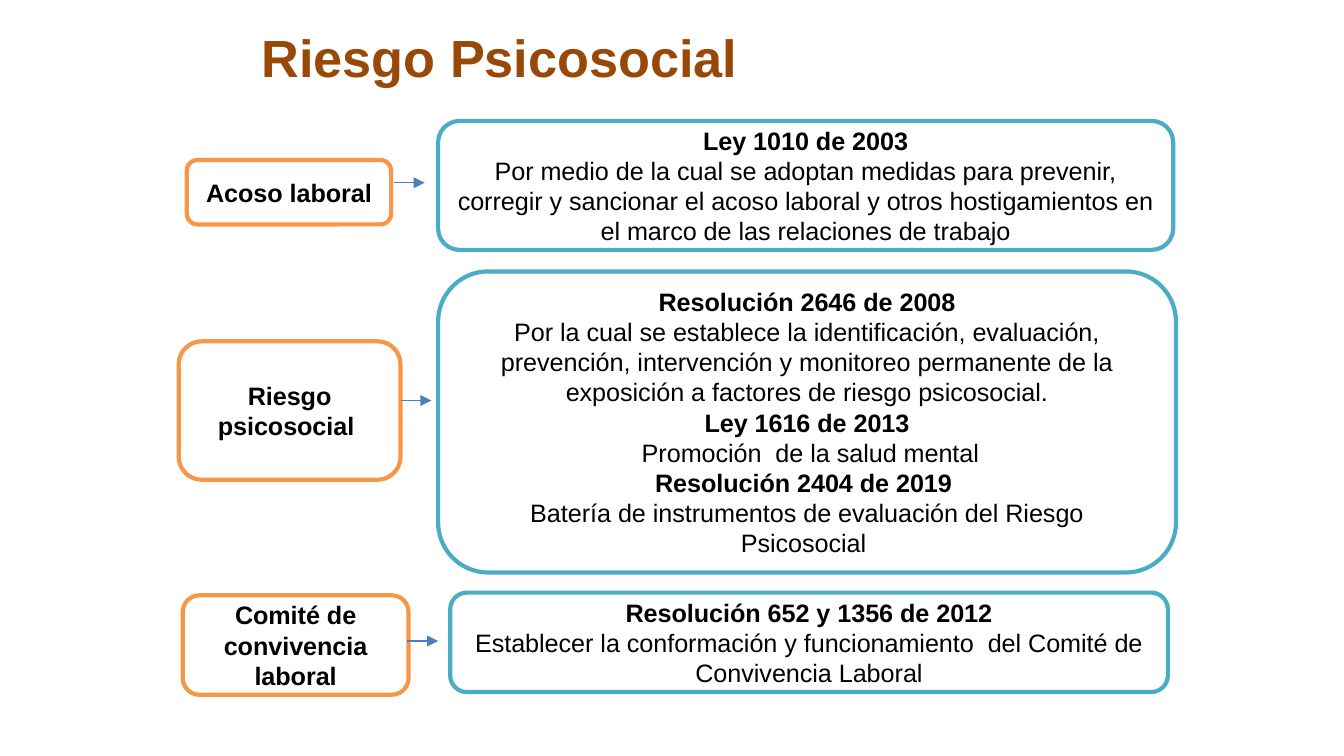
from lxml.etree import SubElement
from pptx import Presentation
from pptx.dml.color import RGBColor
from pptx.enum.shapes import MSO_CONNECTOR, MSO_SHAPE
from pptx.enum.text import MSO_ANCHOR, PP_ALIGN
from pptx.oxml.ns import qn
from pptx.util import Inches, Pt

COLORS = {
    "title": "984807",
    "text": "000000",
    "fill": "FFFFFF",
    "topic": "F79646",
    "law": "4BACC6",
    "arrow": "4B7EBC",
}
SIDE_MARGINS = {"topic": 0.1, "law": 0.09}
ARROW_LENGTH = 0.23

# Each row: topic box and text, arrow start, law box and (heading, description) pairs
ROWS = [
    ((1.39, 1.19, 1.52, 0.48), "Acoso laboral ", (2.93, 1.36),
     (3.26, 0.9, 5.47, 0.96), [
        ("Ley 1010 de 2003",
         "Por medio de la cual se adoptan medidas para prevenir, corregir y sancionar "
         "el acoso laboral y otros hostigamientos en el marco de las relaciones de trabajo"),
    ]),
    ((1.33, 2.54, 1.65, 1.03), "Riesgo psicosocial ", (2.98, 2.98),
     (3.26, 2.02, 5.49, 2.24), [
        ("Resolución 2646 de 2008",
         "Por la cual se establece la identificación, evaluación, prevención, intervención "
         "y monitoreo permanente de la exposición a factores de riesgo psicosocial."),
        ("Ley 1616 de 2013", " Promoción  de la salud mental"),
        ("Resolución 2404 de 2019 ",
         "Batería de instrumentos de evaluación del Riesgo Psicosocial "),
    ]),
    ((1.36, 4.43, 1.68, 0.74), "Comité de convivencia laboral", (3.03, 4.77),
     (3.35, 4.41, 5.34, 0.74), [
        ("Resolución 652 y 1356 de 2012",
         "Establecer la conformación y funcionamiento  del Comité de Convivencia Laboral"),
    ]),
]


def color(name):
    return RGBColor.from_string(COLORS[name])


def write_paragraphs(text_frame, lines, size, color_name):
    """Write one centred paragraph for each (text, bold) pair."""
    text_frame.word_wrap = True
    for index, (text, bold) in enumerate(lines):
        paragraph = text_frame.add_paragraph() if index else text_frame.paragraphs[0]
        paragraph.alignment = PP_ALIGN.CENTER
        run = paragraph.add_run()
        run.text = text
        run.font.name = "Arial"
        run.font.size = Pt(size)
        run.font.bold = bold
        run.font.color.rgb = color(color_name)


def add_title(slide, box, text):
    title = slide.shapes.add_textbox(*map(Inches, box))
    write_paragraphs(title.text_frame, [(text, True)], 28, "title")


def add_rounded_box(slide, box, lines, role):
    """Add a topic or law box, styled by its role."""
    shape = slide.shapes.add_shape(MSO_SHAPE.ROUNDED_RECTANGLE, *map(Inches, box))
    shape.shadow.inherit = False
    shape.fill.solid()
    shape.fill.fore_color.rgb = color("fill")
    shape.line.color.rgb = color(role)
    shape.line.width = Pt(2.25)
    text_frame = shape.text_frame
    text_frame.vertical_anchor = MSO_ANCHOR.MIDDLE
    text_frame.margin_left = text_frame.margin_right = Inches(SIDE_MARGINS[role])
    write_paragraphs(text_frame, lines, 13.5, "text")


def add_arrow(slide, left, top):
    arrow = slide.shapes.add_connector(
        MSO_CONNECTOR.STRAIGHT, Inches(left), Inches(top),
        Inches(left + ARROW_LENGTH), Inches(top))
    arrow.line.color.rgb = color("arrow")
    arrow.line.width = Pt(0.75)
    properties = arrow._element.spPr
    SubElement(properties.find(qn("a:ln")), qn("a:tailEnd"), type="triangle")
    SubElement(properties, qn("a:effectLst"))


def add_row(slide, topic_box, topic, arrow_start, law_box, laws):
    """Add a topic, its arrow and the laws that govern it."""
    add_rounded_box(slide, topic_box, [(topic, True)], "topic")
    lines = [(text, bold) for law in laws for text, bold in zip(law, (True, False))]
    add_rounded_box(slide, law_box, lines, "law")
    add_arrow(slide, *arrow_start)


def main():
    presentation = Presentation()
    presentation.slide_width = Inches(10)
    presentation.slide_height = Inches(10) * 9 // 16
    slide = presentation.slides.add_slide(presentation.slide_layouts[6])
    add_title(slide, (0.83, 0.14, 5.88, 0.57), "Riesgo Psicosocial ")
    for row in ROWS:
        add_row(slide, *row)
    presentation.save("out.pptx")


if __name__ == "__main__":
    main()
